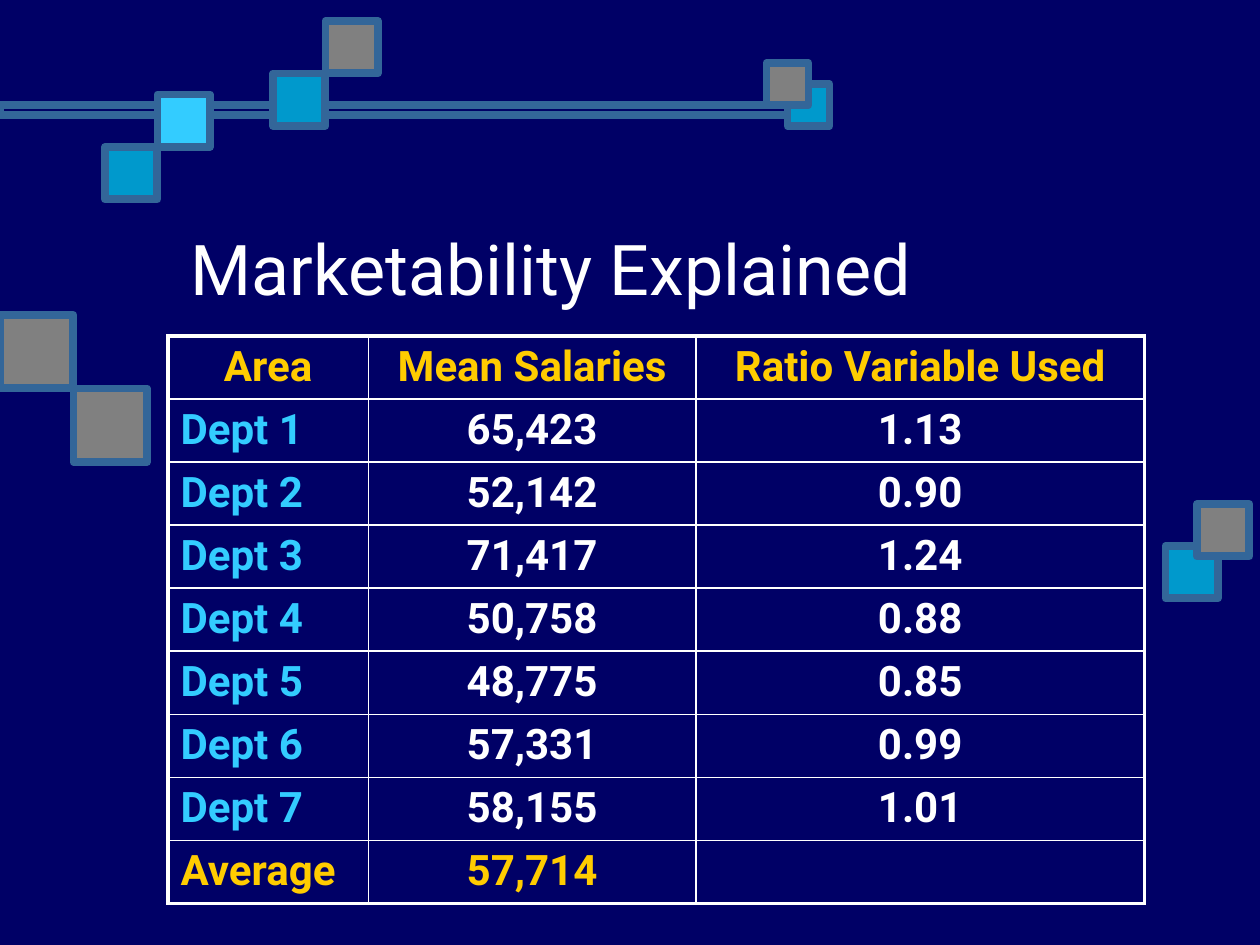
from lxml import etree
from pptx import Presentation
from pptx.dml.color import RGBColor
from pptx.enum.shapes import MSO_SHAPE
from pptx.enum.text import MSO_ANCHOR, PP_ALIGN
from pptx.oxml.ns import qn
from pptx.util import Inches, Pt

RECT = MSO_SHAPE.RECTANGLE
MIDDLE = MSO_ANCHOR.MIDDLE
LEFT, CENTER = PP_ALIGN.LEFT, PP_ALIGN.CENTER

NAVY = RGBColor(0x00, 0x00, 0x66)
STEEL = RGBColor(0x33, 0x66, 0x99)
TEAL = RGBColor(0x00, 0x99, 0xCC)
SKY = RGBColor(0x33, 0xCC, 0xFF)
GRAY = RGBColor(0x80, 0x80, 0x80)
GOLD = RGBColor(0xFF, 0xCC, 0x00)
WHITE = RGBColor(0xFF, 0xFF, 0xFF)

UNIT = Inches(1) // 12  # the layout grid has twelve steps to the inch


def write(p, text, align, **font):
    p.alignment = align
    r = p.add_run()
    r.text = text
    r.font.color.rgb = font.pop("color")
    for name, value in {"name": "Roboto", **font}.items():
        setattr(r.font, name, value)


def make_border(side, width):
    ln = etree.Element(qn(f"a:ln{side}"), w=str(int(Pt(width))))
    fill = etree.SubElement(ln, qn("a:solidFill"))
    etree.SubElement(fill, qn("a:srgbClr"), val=str(WHITE))
    return ln


prs = Presentation()
prs.slide_width, prs.slide_height = 120 * UNIT, 90 * UNIT
s = prs.slides.add_slide(prs.slide_layouts[6])
s.background.fill.solid()
s.background.fill.fore_color.rgb = NAVY

# Bar and decorative squares: left, top, width, height in grid steps
DECOR = [
    (0, 10, 77, 1, None),
    (75, 8, 4, 4, TEAL),
    (73, 6, 4, 4, GRAY),
    (111, 52, 5, 5, TEAL),
    (114, 48, 5, 5, GRAY),
    (0, 30, 7, 7, GRAY),
    (7, 37, 7, 7, GRAY),
    (26, 7, 5, 5, TEAL),
    (10, 14, 5, 5, TEAL),
    (15, 9, 5, 5, SKY),
    (31, 2, 5, 5, GRAY),
]
for *box, color in DECOR:
    sp = s.shapes.add_shape(RECT, *(n * UNIT for n in box))
    sp.shadow.inherit = False
    sp.line.color.rgb = STEEL
    sp.line.width = Pt(4.5)
    if color is None:
        sp.fill.background()
    else:
        sp.fill.solid()
        sp.fill.fore_color.rgb = color

# Title
tf = s.shapes.add_textbox(17 * UNIT, 16 * UNIT, 93 * UNIT, 19 * UNIT).text_frame
tf.word_wrap = True
tf.vertical_anchor = MIDDLE
write(tf.paragraphs[0], "Marketability Explained", LEFT, size=Pt(40), color=WHITE)

# Salary table
ROWS = [
    ("Area", "Mean Salaries", "Ratio Variable Used"),
    ("Dept 1", "65,423", "1.13"),
    ("Dept 2", "52,142", "0.90"),
    ("Dept 3", "71,417", "1.24"),
    ("Dept 4", "50,758", "0.88"),
    ("Dept 5", "48,775", "0.85"),
    ("Dept 6", "57,331", "0.99"),
    ("Dept 7", "58,155", "1.01"),
    ("Average", "57,714", ""),
]
COL_WIDTHS = [1.59, 2.6, 3.56]
ROW_HEIGHT = Inches(0.46)
last_row, last_col = len(ROWS) - 1, len(COL_WIDTHS) - 1

table = s.shapes.add_table(len(ROWS), len(COL_WIDTHS), 16 * UNIT, 32 * UNIT,
                           93 * UNIT, ROW_HEIGHT * len(ROWS)).table
table.first_row = table.horz_banding = False
for col, width in zip(table.columns, COL_WIDTHS):
    col.width = Inches(width)

for i, row in enumerate(ROWS):
    table.rows[i].height = ROW_HEIGHT
    for j, text in enumerate(row):
        cell = table.cell(i, j)
        cell.fill.background()

        # Heavy lines on the outer edge, thin lines inside
        outer = {"L": j == 0, "R": j == last_col, "T": i == 0, "B": i == last_row}
        tcPr = cell._tc.get_or_add_tcPr()
        for k, (side, heavy) in enumerate(outer.items()):
            tcPr.insert(k, make_border(side, 2.25 if heavy else 1))

        if text:
            edge_row = i in (0, last_row)
            color = GOLD if edge_row else SKY if j == 0 else WHITE
            write(cell.text_frame.paragraphs[0], text,
                  LEFT if j == 0 and i > 0 else CENTER,
                  size=Pt(24), bold=True, color=color)

prs.save("out.pptx")
